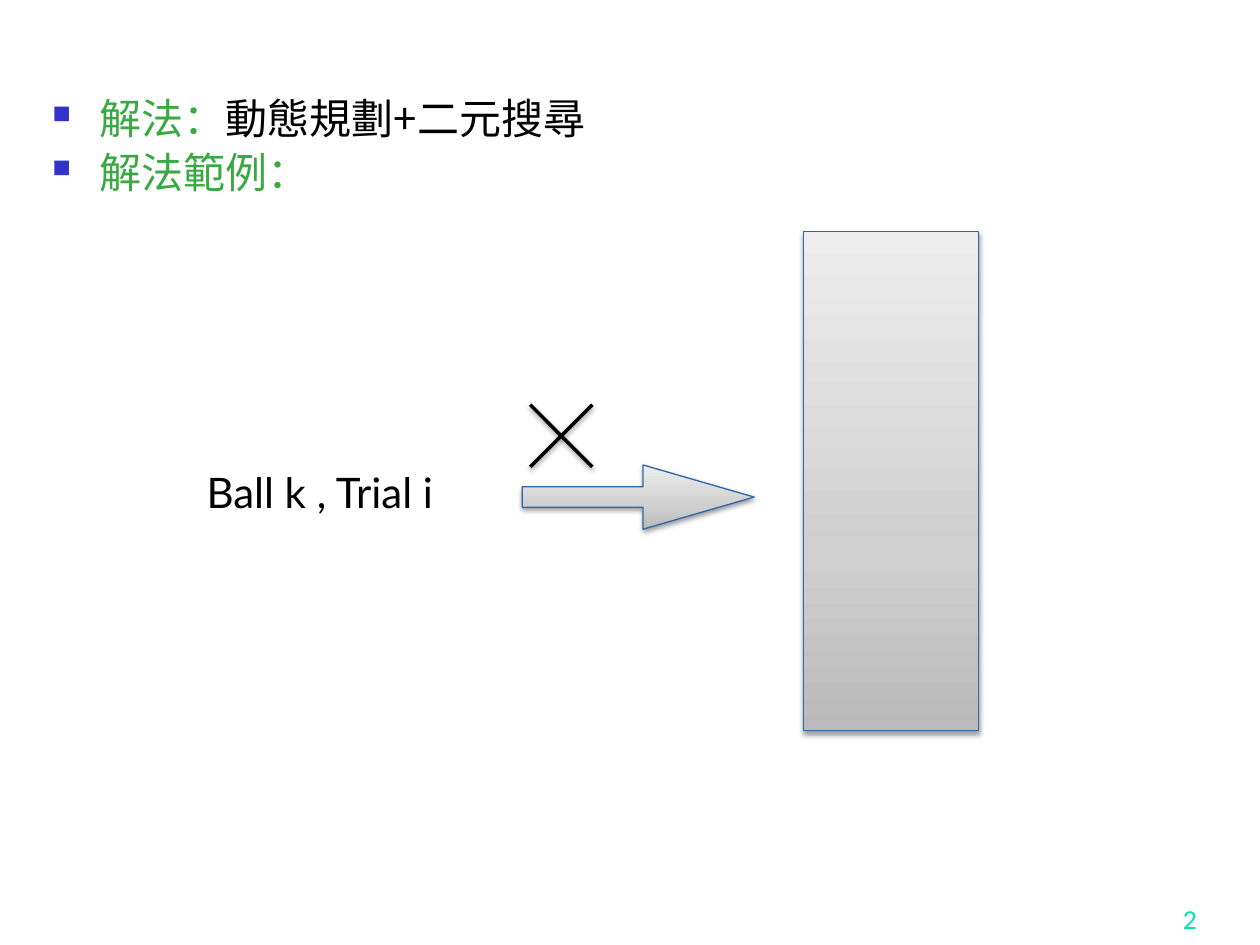
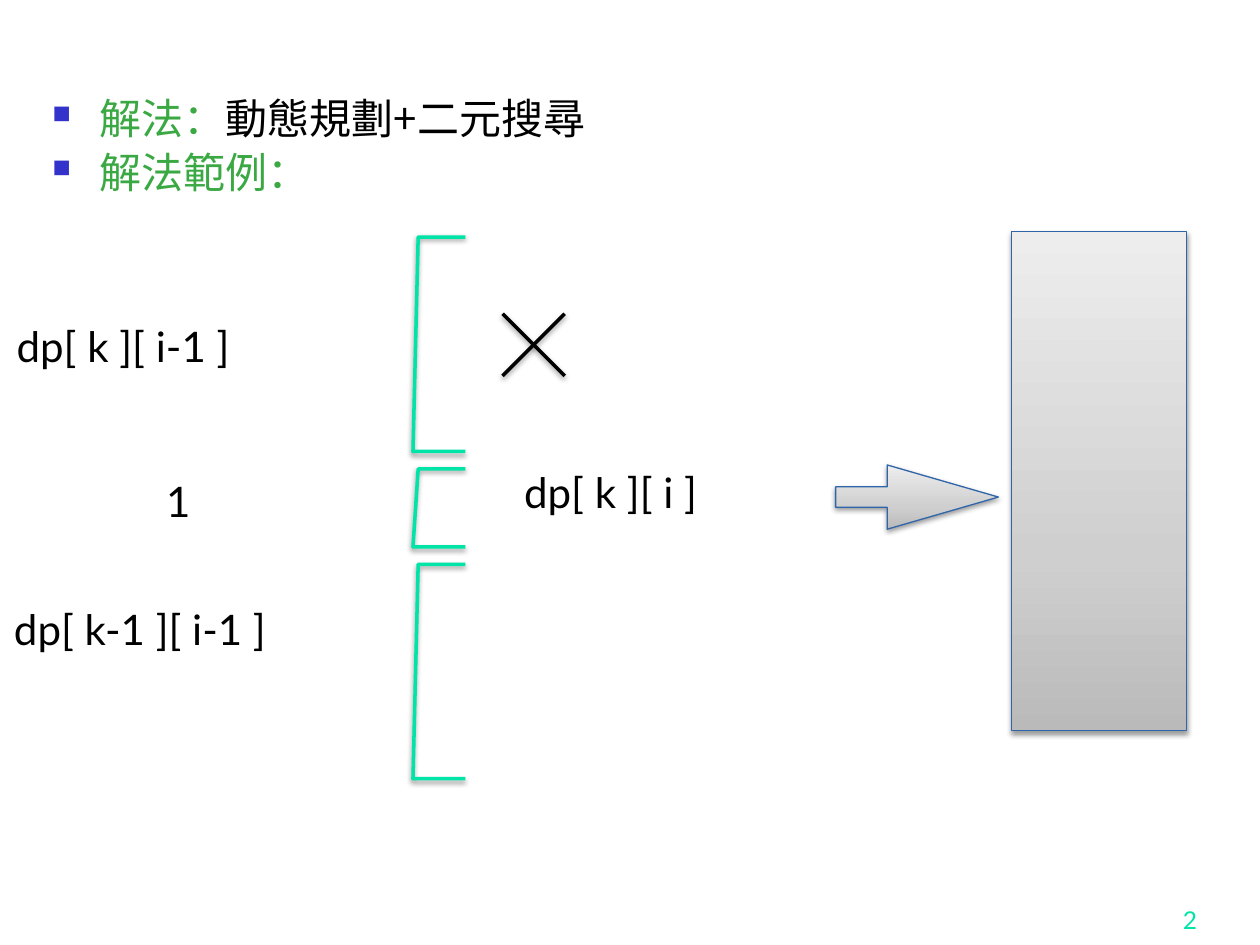
from pptx import Presentation
from pptx.util import Pt
from pptx.dml.color import RGBColor
from pptx.enum.shapes import MSO_CONNECTOR, MSO_SHAPE
from pptx.enum.text import MSO_ANCHOR, MSO_AUTO_SIZE, PP_ALIGN
from pptx.oxml import parse_xml
from pptx.oxml.ns import nsdecls, qn
from lxml.etree import SubElement
from copy import deepcopy

COLOURS = {
    "text": "000000",
    "heading": "3BA943",
    "bullet": "3333CC",
    "accent": "00E4A8",
    "outline": "2F66AA",
}
GRADIENT = [(0, "BABABA"), (0.35, "CFCFCF"), (1, "EDEDED")]
LATIN, CHINESE = "Lato", "Noto Sans CJK SC"


def rgb(name):
    return RGBColor.from_string(COLOURS[name])


def write(para, text, size=24, font=LATIN, colour="text"):
    """Add a formatted span of text to a paragraph."""
    span = para.add_run()
    span.text = text
    span.font.size = Pt(size)
    span.font.name = font
    span.font.color.rgb = rgb(colour)
    if font == CHINESE:
        SubElement(span.font._element, qn("a:ea"), typeface=font)


class Board:
    """Holds the deck style and the slide being drawn."""

    def __init__(self, deck):
        self.deck = deck
        self.page = None

    def new_page(self):
        self.page = self.deck.slides.add_slide(self.deck.slide_layouts[1])
        title = self.page.shapes.title._element
        title.getparent().remove(title)
        self.outline()
        self.label("2", 534, 510, 150, 24, size=14, colour="accent",
                   align=PP_ALIGN.RIGHT, anchor=MSO_ANCHOR.BOTTOM)

    def clear_margins(self, frame):
        frame.margin_left = frame.margin_right = 0
        frame.margin_top = frame.margin_bottom = 0

    def outline(self):
        """Fill the body placeholder with the two bulleted lines."""
        body = self.page.placeholders[1]
        body.left, body.top, body.width, body.height = Pt(30), Pt(55.5), Pt(636), Pt(441)
        frame = body.text_frame
        self.clear_margins(frame)
        frame.auto_size = MSO_AUTO_SIZE.NONE
        for para in (frame.paragraphs[0], frame.add_paragraph()):
            para.line_spacing = Pt(26)
            para.space_before = Pt(5)
            self.bullet(para)
        first, second = frame.paragraphs
        write(first, "解法：", font=CHINESE, colour="heading")
        write(first, "動態規劃+二元搜尋", font=CHINESE)
        write(second, "解法範例：", font=CHINESE, colour="heading")

    def bullet(self, para):
        props = para._p.get_or_add_pPr()
        props.set("marL", str(Pt(27)))
        props.set("indent", str(-Pt(27)))
        colour = SubElement(props, qn("a:buClr"))
        SubElement(colour, qn("a:srgbClr"), val=COLOURS["bullet"])
        SubElement(props, qn("a:buSzPct"), val="60000")
        SubElement(props, qn("a:buFont"), typeface="Wingdings")
        SubElement(props, qn("a:buChar"), char="n")

    def label(self, text, left, top, width, height=29, align=PP_ALIGN.LEFT,
              anchor=MSO_ANCHOR.TOP, **style):
        box = self.page.shapes.add_textbox(Pt(left), Pt(top), Pt(width), Pt(height))
        frame = box.text_frame
        self.clear_margins(frame)
        frame.word_wrap = align == PP_ALIGN.RIGHT
        frame.auto_size = MSO_AUTO_SIZE.SHAPE_TO_FIT_TEXT
        frame.vertical_anchor = anchor
        para = frame.paragraphs[0]
        para.alignment = align
        write(para, text, **style)

    def finish(self, shape, colour, width):
        """Give a shape its line and the soft shadow below it."""
        shape.line.color.rgb = rgb(colour)
        shape.line.width = Pt(width)
        shape._element.spPr.append(parse_xml(
            f'<a:effectLst {nsdecls("a")}><a:outerShdw blurRad="{Pt(3)}" '
            f'dist="{Pt(1.6)}" dir="5400000" rotWithShape="0">'
            '<a:srgbClr val="000000"><a:alpha val="38000"/></a:srgbClr>'
            '</a:outerShdw></a:effectLst>'))

    def block(self, kind, left, top, width, height, adjustments=()):
        shape = self.page.shapes.add_shape(kind, Pt(left), Pt(top), Pt(width), Pt(height))
        for index, value in enumerate(adjustments):
            shape.adjustments[index] = value
        shape.fill.gradient()
        shape.fill.gradient_angle = 90
        stops = shape._element.spPr.find(".//" + qn("a:gsLst"))
        stops.append(deepcopy(stops[0]))
        for stop, (position, colour) in zip(shape.fill.gradient_stops, GRADIENT):
            stop.position = position
            stop.color.rgb = RGBColor.from_string(colour)
        self.finish(shape, "outline", 0.75)

    def building(self, left):
        self.block(MSO_SHAPE.RECTANGLE, left, 132.5, 100, 285)

    def arrow(self, left, width):
        self.block(MSO_SHAPE.RIGHT_ARROW, left, 265.7, width, 36.7, (0.32, 1.731))

    def cross(self, left, top, size=35.5):
        group = self.page.shapes.add_group_shape()
        for start, end in ((top + size, top), (top, top + size)):
            stroke = group.shapes.add_connector(
                MSO_CONNECTOR.STRAIGHT, Pt(left), Pt(start), Pt(left + size), Pt(end))
            self.finish(stroke, "text", 2)

    def bracket(self, top, height, left=236):
        points = [(left + 3, top), (left, top + height), (left + 30, top + height)]
        builder = self.page.shapes.build_freeform(Pt(left + 30), Pt(top))
        builder.add_line_segments([(Pt(x), Pt(y)) for x, y in points], close=False)
        shape = builder.convert_to_shape()
        shape.fill.background()
        self.finish(shape, "accent", 2)


def main():
    deck = Presentation()
    deck.slide_width, deck.slide_height = Pt(720), Pt(540)
    board = Board(deck)

    # One throw of a ball at the building
    board.new_page()
    board.building(459)
    board.arrow(298.5, 132.5)
    board.label("Ball k , Trial i", 118, 266.5, 140.5)
    board.cross(303, 231.3)

    # Floors covered by each outcome of the throw
    board.new_page()
    board.building(578)
    board.arrow(477.5, 93)
    board.label("dp[ k ][ i ]", 299.5, 266.5, 112.5)
    board.cross(287.2, 179.3)
    top, gap = 135.5, 10
    for height in (122.5, 44.5, 122.5):
        board.bracket(top, height)
        top += height + gap
    board.label("dp[ k ][ i-1 ]", 9.5, 183, 134)
    board.label("1", 95, 272, 21.5, 36)
    board.label("dp[ k-1 ][ i-1 ]", 8, 345, 156)

    deck.save("out.pptx")


if __name__ == "__main__":
    main()
